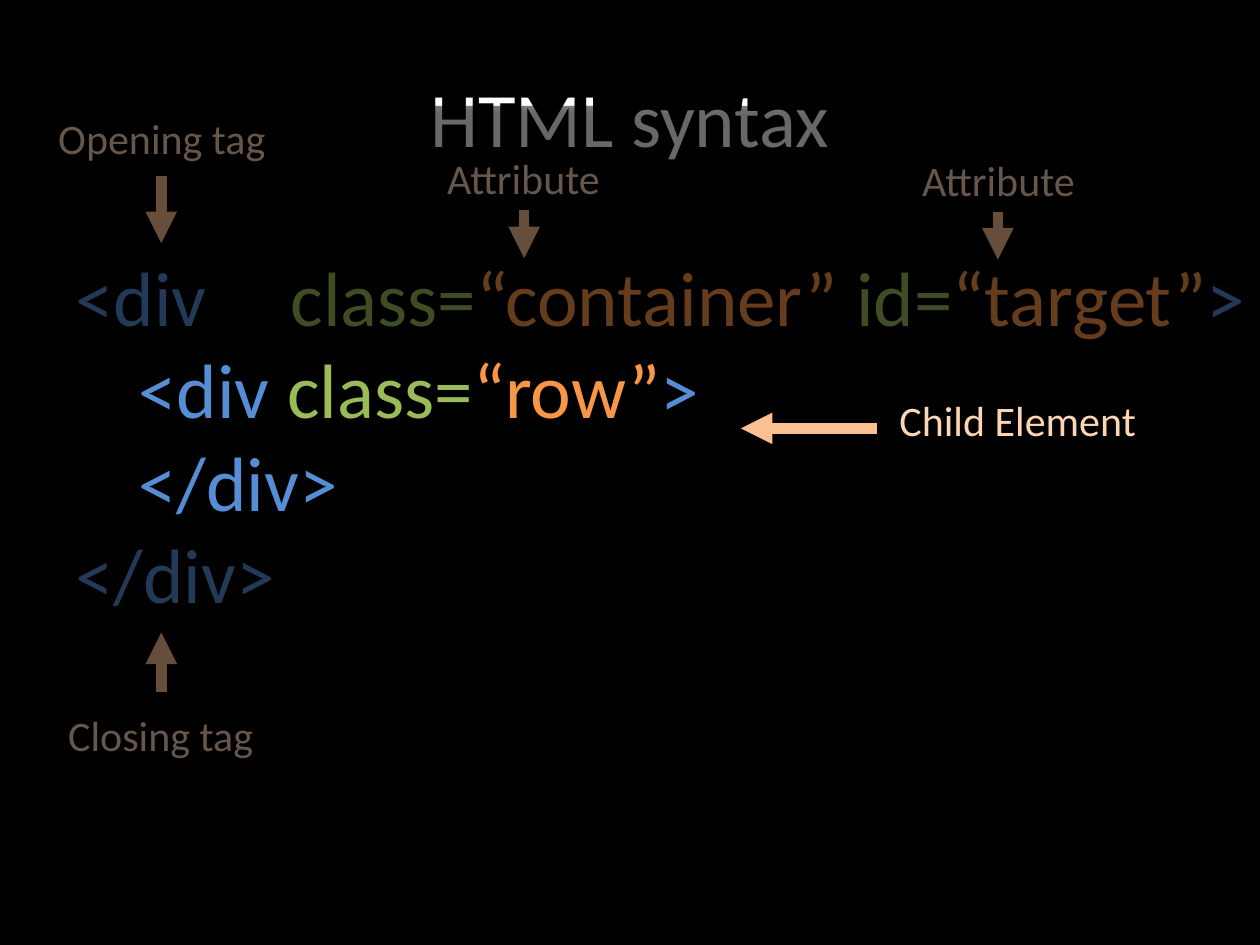
from dataclasses import dataclass

from lxml.etree import SubElement as Sub
from pptx import Presentation
from pptx.dml.color import RGBColor as Rgb
from pptx.enum.shapes import MSO_CONNECTOR as Link, MSO_SHAPE as Form
from pptx.enum.text import MSO_ANCHOR as Anchor, PP_ALIGN as Align
from pptx.oxml.ns import qn
from pptx.util import Inches, Pt


@dataclass(frozen=True)
class Theme:
    font: str = "Calibri"
    big: int = 44
    small: int = 24
    line: int = 6
    black: str = "000000"
    white: str = "FFFFFF"
    tag: str = "558ED5"
    name: str = "9BBB59"
    value: str = "F79646"
    label: str = "FCD5B5"
    arrow: str = "FAC090"


@dataclass(frozen=True)
class Row:
    runs: tuple[tuple[str, str], ...]
    indent: float = 0
    stop: float = 0


@dataclass(frozen=True)
class Note:
    text: str
    box: tuple[float, float, float, float]
    start: tuple[float, float]
    end: tuple[float, float]
    align: Align = Align.CENTER


T = Theme()

CODE = (
    Row((("<div\t", T.tag), ("class=", T.name), ("“container” ", T.value),
         ("id=", T.name), ("“target”", T.value), (">", T.tag)), stop=1.71),
    Row((("<div ", T.tag), ("class=", T.name), ("“row”", T.value),
         (">", T.tag)), indent=0.5),
    Row((("</div>", T.tag),), indent=0.5),
    Row((("</div>", T.tag),)),
)

NOTES = (
    Note("Opening tag", (0.35, 0.84, 1.87, 0.5), (1.28, 1.4), (1.28, 1.93)),
    Note("Closing tag", (0.43, 5.58, 1.69, 0.5), (1.28, 5.49), (1.28, 5.02)),
    Note("Attribute", (3.44, 1.16, 1.43, 0.5), (4.16, 1.67), (4.16, 2.05)),
    Note("Attribute", (7.21, 1.18, 1.43, 0.5), (7.92, 1.68), (7.92, 2.06)),
    Note("Child Element", (7.04, 3.08, 2.17, 0.5), (6.96, 3.4), (5.88, 3.4),
         Align.LEFT),
)

VEILS = ((0.43, 0.84, 9.47, 1.91), (0.43, 4.25, 9.47, 2.01))


def write(slide, rows: tuple[Row, ...], box: tuple, *, size: int,
          align: Align = Align.LEFT, anchor: Anchor = Anchor.TOP,
          wrap: bool = False) -> None:
    frame = slide.shapes.add_textbox(*map(Inches, box)).text_frame
    frame.word_wrap = wrap
    frame.vertical_anchor = anchor
    for i, row in enumerate(rows):
        para = frame.add_paragraph() if i else frame.paragraphs[0]
        para.alignment = align
        props = para._p.get_or_add_pPr()
        if row.indent:
            props.set("marL", str(Inches(row.indent)))
            props.set("indent", "0")
        if row.stop:
            tabs = Sub(props, qn("a:tabLst"))
            Sub(tabs, qn("a:tab"), pos=str(Inches(row.stop)), algn="l")
        for text, color in row.runs:
            run = para.add_run()
            run.text = text
            run.font.name = T.font
            run.font.size = Pt(size)
            run.font.color.rgb = Rgb.from_string(color)


def point(slide, start: tuple, end: tuple) -> None:
    link = slide.shapes.add_connector(
        Link.STRAIGHT, *map(Inches, start + end))
    link.line.color.rgb = Rgb.from_string(T.arrow)
    link.line.width = Pt(T.line)
    Sub(link.line._get_or_add_ln(), qn("a:tailEnd"), type="triangle")
    Sub(link._element.spPr, qn("a:effectLst"))


def veil(slide, box: tuple) -> None:
    shape = slide.shapes.add_shape(Form.RECTANGLE, *map(Inches, box))
    shape.fill.solid()
    shape.fill.fore_color.rgb = Rgb.from_string(T.black)
    shape.line.fill.background()
    shape.shadow.inherit = False
    props = shape._element.spPr
    fill = props.find(qn("a:solidFill")).find(qn("a:srgbClr"))
    Sub(fill, qn("a:alpha"), val="50000")
    shade = Sub(props.find(qn("a:effectLst")), qn("a:outerShdw"),
                blurRad=str(Pt(3.1)), dist=str(Pt(1.8)), dir="5400000",
                rotWithShape="0")
    color = Sub(shade, qn("a:srgbClr"), val=T.black)
    Sub(color, qn("a:alpha"), val="35000")


def main() -> None:
    deck = Presentation()
    deck.slide_width, deck.slide_height = Inches(10), Inches(7.5)
    slide = deck.slides.add_slide(deck.slide_layouts[6])
    slide.background.fill.solid()
    slide.background.fill.fore_color.rgb = Rgb.from_string(T.black)

    write(slide, (Row((("HTML syntax", T.white),)),), (0.5, 0.3, 9, 1.25),
          size=T.big, align=Align.CENTER, anchor=Anchor.MIDDLE, wrap=True)
    write(slide, CODE, (0.5, 1.93, 9.6, 3.06), size=T.big)
    for note in NOTES:
        write(slide, (Row(((note.text, T.label),)),), note.box,
              size=T.small, align=note.align)
        point(slide, note.start, note.end)
    for box in VEILS:
        veil(slide, box)
    deck.save("out.pptx")


if __name__ == "__main__":
    main()
